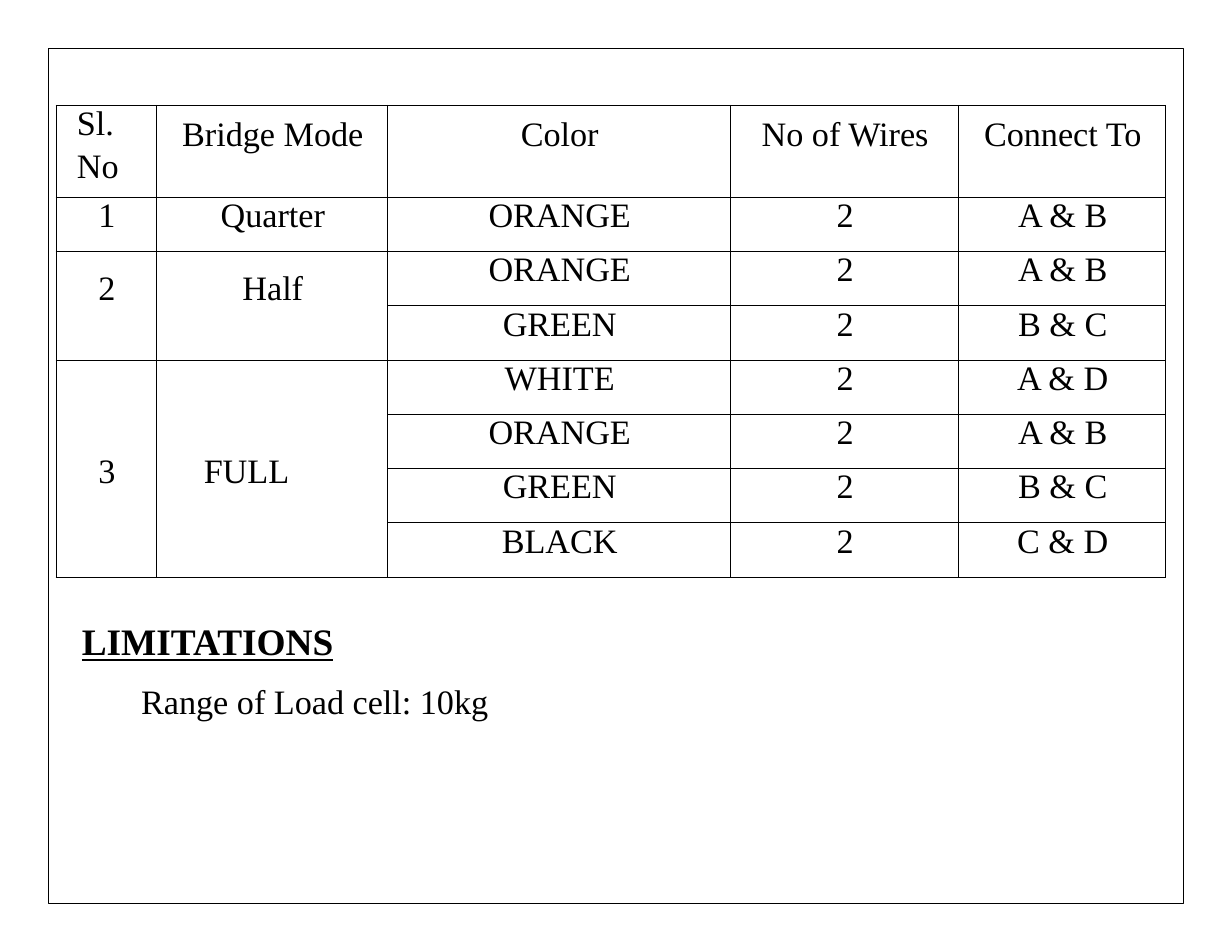
from pptx import Presentation
from pptx.dml.color import RGBColor
from pptx.enum.shapes import MSO_SHAPE
from pptx.enum.text import PP_ALIGN
from pptx.oxml.ns import qn
from pptx.util import Pt
from lxml import etree

RECTANGLE = MSO_SHAPE.RECTANGLE
LEFT, CENTER = PP_ALIGN.LEFT, PP_ALIGN.CENTER
FONT = "Times New Roman"
COLORS = {"ink": "000000"}
INK = RGBColor.from_string(COLORS["ink"])


def style(p, size, align=CENTER, bold=False):
    p.alignment = align
    for r in p.runs:
        r.font.name = FONT
        r.font.size = Pt(size)
        r.font.bold = bold
        r.font.underline = bold
        r.font.color.rgb = INK


def add_borders(cell):
    tcPr = cell._tc.get_or_add_tcPr()
    for i, side in enumerate(("lnL", "lnR", "lnT", "lnB")):
        ln = etree.Element(qn("a:" + side), w=str(Pt(0.5)))
        fill = etree.SubElement(ln, qn("a:solidFill"))
        etree.SubElement(fill, qn("a:srgbClr"), val=COLORS["ink"])
        tcPr.insert(i, ln)


prs = Presentation()
prs.slide_width, prs.slide_height = Pt(792), Pt(612)
s = prs.slides.add_slide(prs.slide_layouts[6])

rows = [
    ("Sl.\nNo", "Bridge Mode", "Color", "No of Wires", "Connect To"),
    ("1", "Quarter", "ORANGE", "2", "A & B"),
    ("2", "Half", "ORANGE", "2", "A & B"),
    ("", "", "GREEN", "2", "B & C"),
    ("3", "FULL", "WHITE", "2", "A & D"),
    ("", "", "ORANGE", "2", "A & B"),
    ("", "", "GREEN", "2", "B & C"),
    ("", "", "BLACK", "2", "C & D"),
]
widths = [64.8, 148.5, 220.4, 146.6, 133.2]
heights = [59] + [34.9] * 7
spans = {2: 3, 4: 7}
top_margins = {0: 7.2, 2: 12.2, 4: 60}
left_aligned = {"Sl.\nNo": 13.5, "FULL": 30.2}

table = s.shapes.add_table(len(rows), len(widths), Pt(36), Pt(67.7),
                           Pt(sum(widths)), Pt(sum(heights))).table
table.first_row = table.horz_banding = False
for column, width in zip(table.columns, widths):
    column.width = Pt(width)
for row, height in zip(table.rows, heights):
    row.height = Pt(height)

for i, texts in enumerate(rows):
    for j, text in enumerate(texts):
        cell = table.cell(i, j)
        cell.fill.background()
        add_borders(cell)
        merged = i in spans and j < 2
        header = i == 0 and j > 0
        cell.margin_top = Pt(top_margins[i] if merged or header else 0)
        cell.margin_left = Pt(left_aligned.get(text, 0.7))
        cell.margin_right = cell.margin_bottom = 0
        if text:
            cell.text_frame.text = text
        for p in cell.text_frame.paragraphs:
            style(p, 22, LEFT if text in left_aligned else CENTER)

table.cell(0, 0).text_frame.paragraphs[1].space_before = Pt(3)
for first, last in spans.items():
    for j in range(2):
        table.cell(first, j).merge(table.cell(last, j))

sp = s.shapes.add_textbox(Pt(52.6), Pt(384.5), Pt(263.5), Pt(80))
tf = sp.text_frame
tf.word_wrap = True
tf.margin_left = tf.margin_right = tf.margin_bottom = 0
tf.margin_top = Pt(13)
tf.text = "LIMITATIONS\nRange of Load cell: 10kg"
heading, limit = tf.paragraphs
style(heading, 24, LEFT, True)
style(limit, 22)
limit.space_before = Pt(10.8)
limit._p.get_or_add_pPr().set("marL", str(Pt(36)))

frame = s.shapes.add_shape(RECTANGLE, Pt(31.2), Pt(31.2), Pt(729.6), Pt(549.6))
frame.shadow.inherit = False
frame.fill.background()
frame.line.color.rgb = INK
frame.line.width = Pt(0.5)

prs.save("out.pptx")
